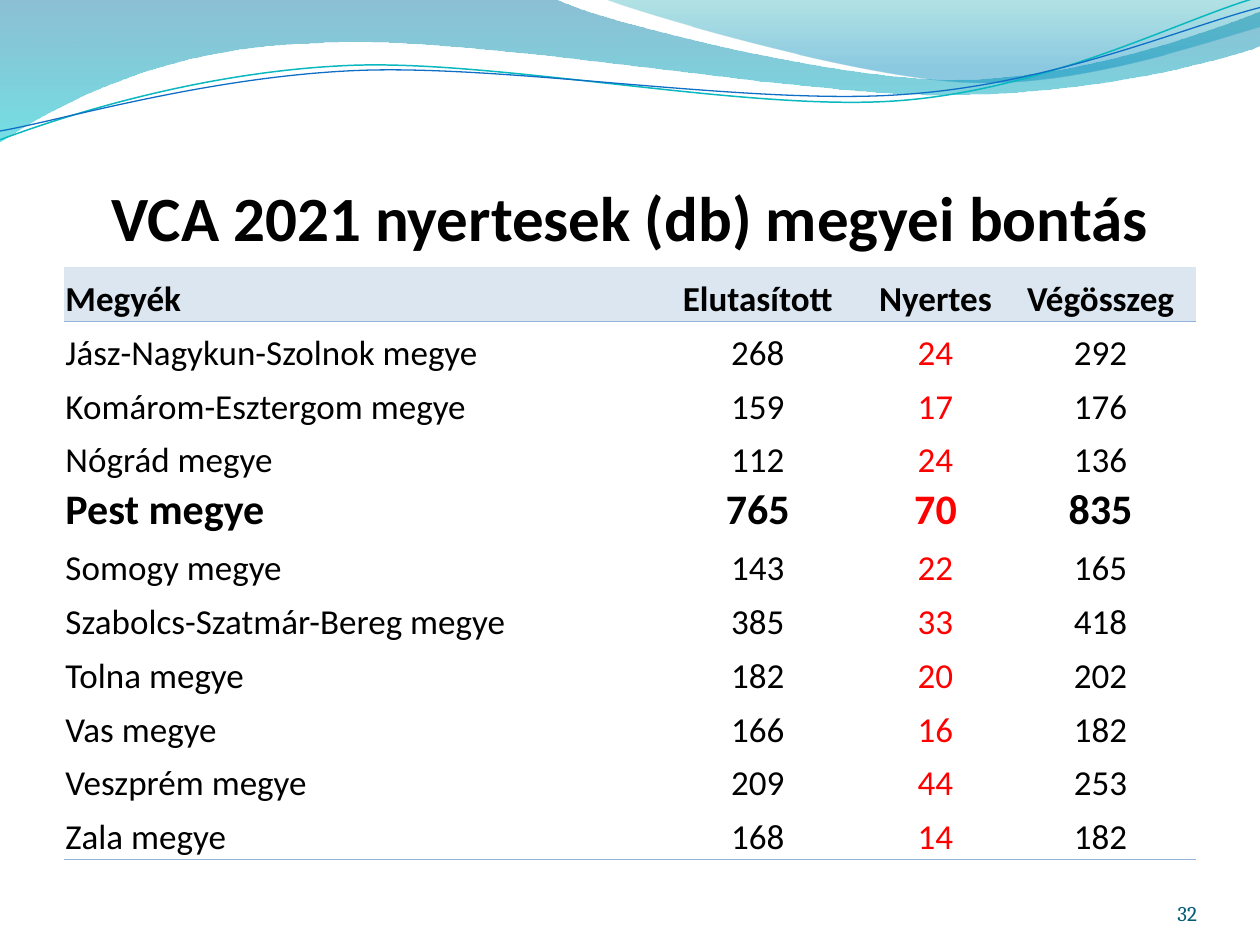
import lxml.etree
import pptx
import pptx.dml.color
import pptx.enum.text
import pptx.oxml.ns
import pptx.util

Inches = pptx.util.Inches
Align = pptx.enum.text.PP_ALIGN
Anchor = pptx.enum.text.MSO_ANCHOR

THEME = {
    "font": "Calibri", "page_font": "Cambria",
    "title": 36, "body": 20, "strong": 24, "page": 12,
    "ink": "000000", "win": "FF0000", "page_ink": "045D75",
    "head": "DCE6F1", "rule": "95B3D7", "rule_pt": 0.5,
}
TITLE = "VCA 2021 nyertesek (db) megyei bontás"
PAGE = "32"
HEAD = ("Megyék", "Elutasított", "Nyertes", "Végösszeg")
ROWS = [
    ("Jász-Nagykun-Szolnok megye", 268, 24, 292),
    ("Komárom-Esztergom megye", 159, 17, 176),
    ("Nógrád megye", 112, 24, 136),
    ("Pest megye", 765, 70, 835),
    ("Somogy megye", 143, 22, 165),
    ("Szabolcs-Szatmár-Bereg megye", 385, 33, 418),
    ("Tolna megye", 182, 20, 202),
    ("Vas megye", 166, 16, 182),
    ("Veszprém megye", 209, 44, 253),
    ("Zala megye", 168, 14, 182),
]
STRONG = "Pest megye"
WIDTHS = (4.65, 1.71, 1.11, 1.51)
TABLE = (0.51, 2.12, sum(WIDTHS), 4.7)

BANDS = [
    ([(0, 0), (4.4, -0.01), (4.76, 0.17, 6.64, 0.63, 7.58, 0.63),
      (8.53, 0.63, 9.58, 0.26, 10, 0.09), (10.01, 0.36),
      (9.83, 0.44, 8.7, 0.76, 7.46, 0.75), (6.22, 0.75, 3.82, 0.28, 2.57, 0.34),
      (1.29, 0.36, 0.46, 0.83, -0.01, 1.13)],
     [(0, "0074A1", 45), (1, "00C6CF", 55)]),
    ([(4.79, -0.01), (5.09, 0.11, 6.82, 0.62, 7.69, 0.65),
      (8.56, 0.69, 9.61, 0.32, 10, 0.21), (10, 0)],
     [(0, "00A1A9", 30), (0.8, "008BBF", 45)]),
]
WAVES = [
    ([(0, 1.11), (0.48, 0.93, 1.58, 0.57, 2.77, 0.52),
      (3.95, 0.47, 5.93, 0.89, 7.13, 0.8), (8.33, 0.71, 9.38, 0.15, 9.98, -0.02)],
     "0AB8BF", 0.85),
    ([(0, 1.04), (0.47, 0.96, 1.64, 0.61, 2.83, 0.56),
      (4.03, 0.51, 5.97, 0.84, 7.17, 0.75), (8.36, 0.67, 9.41, 0.21, 10, 0.06)],
     "0F6FC6", 0.75),
]


def rgb(code):
    return pptx.dml.color.RGBColor.from_string(code)


def node(base, tag, **attrs):
    return lxml.etree.SubElement(base, pptx.oxml.ns.qn(tag), attrs)


def draw(slide, route, close):
    spots = [tuple(map(Inches, part)) for part in route]
    pen = slide.shapes.build_freeform(*spots[0])
    pen.add_line_segments([spot[-2:] for spot in spots[1:]], close=close)
    shape = pen.convert_to_shape()
    shape.shadow.inherit = False
    legs = list(shape.element.spPr.iter(pptx.oxml.ns.qn("a:lnTo")))
    for leg, spot in zip(legs, spots[1:]):
        if len(spot) == 6:
            curve = node(leg.getparent(), "a:cubicBezTo")
            for x, y in zip(spot[::2], spot[1::2]):
                node(curve, "a:pt", x=str(x - shape.left), y=str(y - shape.top))
            leg.getparent().replace(leg, curve)
    return shape


def add_band(slide, route, stops):
    shape = draw(slide, route, True)
    shape.line.fill.background()
    shape.fill.gradient()
    shape.fill.gradient_angle = 270
    for stop, (place, code, _) in zip(shape.fill.gradient_stops, stops):
        stop.position = place
        stop.color.rgb = rgb(code)
    tints = shape.element.spPr.iter(pptx.oxml.ns.qn("a:srgbClr"))
    for tint, (_, _, alpha) in zip(tints, stops):
        node(tint, "a:alpha", val=str(alpha * 1000))


def add_wave(slide, route, code, width):
    shape = draw(slide, route, False)
    shape.fill.background()
    shape.line.color.rgb = rgb(code)
    shape.line.width = pptx.util.Pt(width)


def write(frame, text, size, align, ink="ink", font="font", bold=False):
    para = frame.paragraphs[0]
    para.alignment = align
    run = para.add_run()
    run.text = text
    run.font.name = THEME[font]
    run.font.size = pptx.util.Pt(THEME[size])
    run.font.bold = bold
    run.font.color.rgb = rgb(THEME[ink])


def add_label(slide, box, top, text, size, align, **style):
    frame = slide.shapes.add_textbox(*map(Inches, box)).text_frame
    frame.word_wrap = True
    frame.vertical_anchor = Anchor.BOTTOM
    frame.margin_left = frame.margin_right = frame.margin_bottom = 0
    frame.margin_top = Inches(top)
    write(frame, text, size, align, **style)


def add_rules(cell, shown):
    props = cell._tc.get_or_add_tcPr()
    for side in "LRTB":
        line = node(props, "a:ln" + side, w=str(pptx.util.Pt(THEME["rule_pt"])))
        if side in shown:
            node(node(line, "a:solidFill"), "a:srgbClr", val=THEME["rule"])
        else:
            node(line, "a:noFill")


def add_table(slide):
    data = [HEAD] + ROWS
    rules = {0: "B", 1: "T", len(data) - 1: "B"}
    table = slide.shapes.add_table(len(data), len(HEAD), *map(Inches, TABLE)).table
    table.first_row = table.horz_banding = False
    style = table._tbl.tblPr.find(pptx.oxml.ns.qn("a:tableStyleId"))
    style.text = "{2D5ABB26-0587-4C30-8999-92F81FD0307C}"
    for col, width in zip(table.columns, WIDTHS):
        col.width = Inches(width)
    for r, row in enumerate(data):
        table.rows[r].height = Inches(TABLE[3] / len(data))
        strong = row[0] == STRONG
        for c, value in enumerate(row):
            cell = table.cell(r, c)
            cell.vertical_anchor = Anchor.BOTTOM
            cell.margin_left = cell.margin_right = cell.margin_top = Inches(0.01)
            cell.margin_bottom = 0
            add_rules(cell, rules.get(r, ""))
            if r == 0:
                cell.fill.solid()
                cell.fill.fore_color.rgb = rgb(THEME["head"])
            else:
                cell.fill.background()
            write(cell.text_frame, str(value), "strong" if strong else "body",
                  Align.CENTER if c else Align.LEFT,
                  ink="win" if r and c == 2 else "ink", bold=strong or r == 0)


def main():
    deck = pptx.Presentation()
    deck.slide_width, deck.slide_height = Inches(10), Inches(7.5)
    slide = deck.slides.add_slide(deck.slide_layouts[6])
    for band in BANDS:
        add_band(slide, *band)
    for wave in WAVES:
        add_wave(slide, *wave)
    add_label(slide, (0.5, 0.77, 9, 1.25), 0.05, TITLE, "title", Align.CENTER, bold=True)
    add_table(slide)
    add_label(slide, (8.67, 6.95, 0.83, 0.4), 0, PAGE, "page", Align.RIGHT,
              ink="page_ink", font="page_font")
    deck.save("out.pptx")


if __name__ == "__main__":
    main()
